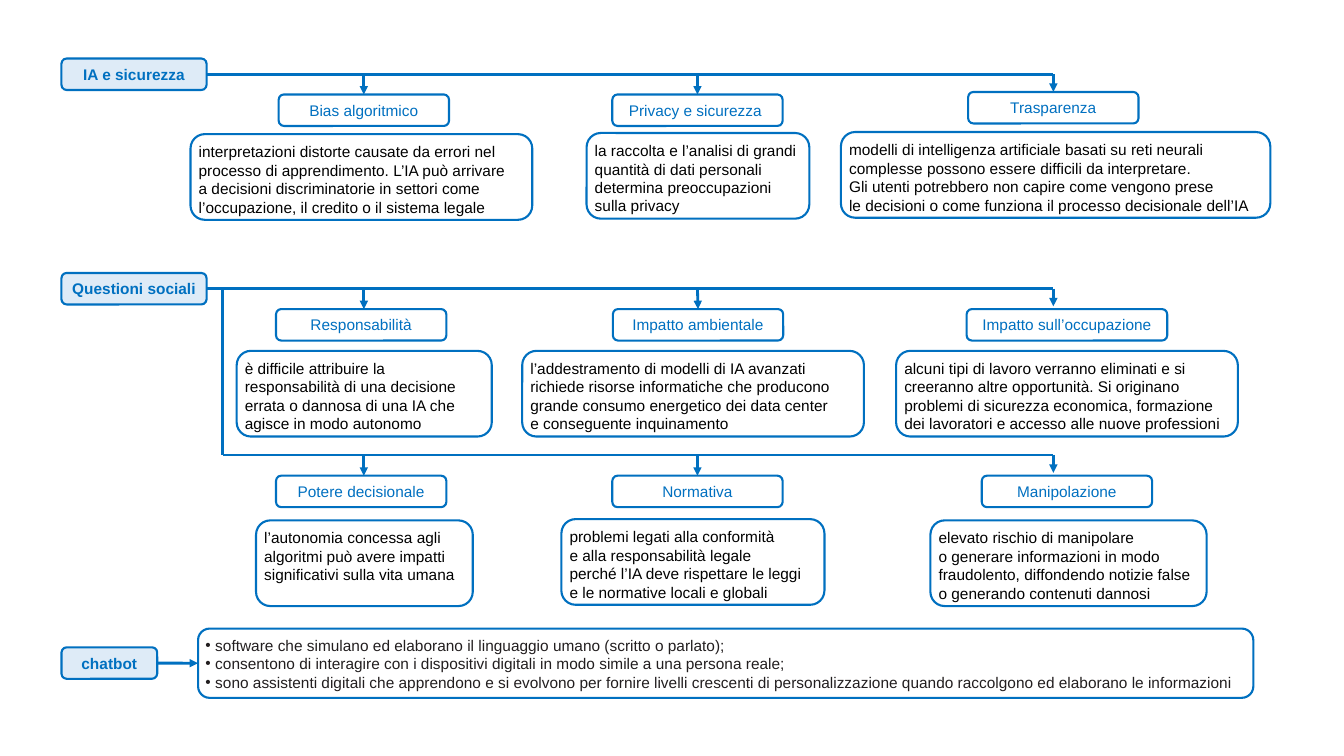
from dataclasses import dataclass

from lxml import etree
from pptx import Presentation
from pptx.dml.color import RGBColor
from pptx.enum.shapes import MSO_CONNECTOR, MSO_SHAPE
from pptx.enum.text import MSO_ANCHOR, PP_ALIGN
from pptx.oxml.ns import qn
from pptx.util import Pt

ROUNDED = MSO_SHAPE.ROUNDED_RECTANGLE
STRAIGHT = MSO_CONNECTOR.STRAIGHT
CENTER, LEFT = PP_ALIGN.CENTER, PP_ALIGN.LEFT
TOP, MIDDLE = MSO_ANCHOR.TOP, MSO_ANCHOR.MIDDLE
TOP_SIDE, LEFT_SIDE, RIGHT_SIDE = 0, 1, 3


@dataclass(frozen=True)
class Theme:
    """Colours, type and line sizes of the map."""
    blue: RGBColor = RGBColor(0x00, 0x70, 0xC0)
    pale: RGBColor = RGBColor(0xDE, 0xEB, 0xF7)
    black: RGBColor = RGBColor(0, 0, 0)
    soft_black: RGBColor = RGBColor(0x22, 0x1E, 0x1F)
    font: str = "Arial"
    size: int = 11
    border: float = 1.5
    branch: float = 2


@dataclass(frozen=True)
class Topic:
    """A heading and the explanation under it."""
    heading: str
    center: float
    top: float
    body_left: float
    body_top: float
    body_width: float
    body: str
    width: float = 121.7


THEME = Theme()
AXES = (259.9, 498.2, 752.4)
TAG_LEFT = 43.9
LABEL_HEIGHT = 22.5
BODY_HEIGHT = 61.2
STEM_X = 159.1
SECOND_RAIL_Y = 325

SECURITY = (
    Topic("Bias algoritmico", 259.9, 67.5, 136.1, 95.8, 244.1,
          "interpretazioni distorte causate da errori nel processo di apprendimento. "
          "L’IA può arrivare\n"
          "a decisioni discriminatorie in settori come l’occupazione, il credito "
          "o il sistema legale"),
    Topic("Privacy e sicurezza ", 498.2, 67.5, 419, 95, 159.1,
          "la raccolta e l’analisi di grandi quantità di dati personali "
          "determina preoccupazioni sulla privacy"),
    Topic("Trasparenza", 752.4, 65.7, 600.7, 94.3, 306.7,
          "modelli di intelligenza artificiale basati su reti neurali complesse "
          "possono essere difficili da interpretare.\n"
          "Gli utenti potrebbero non capire come vengono prese\n"
          "le decisioni o come funziona il processo decisionale dell’IA"),
)
SOCIAL = (
    Topic("Responsabilità", 258, 220.8, 169.1, 250.6, 182.2,
          "è difficile attribuire la responsabilità di una decisione errata "
          "o dannosa di una IA che agisce in modo autonomo"),
    Topic("Impatto ambientale", 498.6, 220.8, 373, 250.6, 244.1,
          "l’addestramento di modelli di IA avanzati richiede risorse informatiche "
          "che producono grande consumo energetico dei data center\n"
          "e conseguente inquinamento"),
    Topic("Impatto sull’occupazione", 762.1, 220.8, 640.1, 250.6, 244.1,
          "alcuni tipi di lavoro verranno eliminati e si creeranno altre opportunità. "
          "Si originano problemi di sicurezza economica, formazione dei lavoratori "
          "e accesso alle nuove professioni", 143.3),
)
POWER = (
    Topic("Potere decisionale", 258, 339.8, 182.9, 371.7, 154.8,
          "l’autonomia concessa agli algoritmi può avere impatti significativi "
          "sulla vita umana"),
    Topic("Normativa", 498.2, 339.8, 401, 370.8, 187.9,
          "problemi legati alla conformità\n"
          "e alla responsabilità legale\n"
          "perché l’IA deve rispettare le leggi\n"
          "e le normative locali e globali"),
    Topic("Manipolazione", 762.1, 339.8, 664.6, 371.7, 197.3,
          "elevato rischio di manipolare\n"
          "o generare informazioni in modo fraudolento, diffondendo notizie false "
          "o generando contenuti dannosi"),
)
CHATBOT = (
    "software che simulano ed elaborano il linguaggio umano (scritto o parlato);\n"
    "consentono di interagire con i dispositivi digitali in modo simile a una persona reale;\n"
    "sono assistenti digitali che apprendono e si evolvono per fornire livelli crescenti "
    "di personalizzazione quando raccolgono ed elaborano le informazioni"
)


def add_bullet(paragraph):
    """Give a paragraph a bullet and a hanging indent."""
    properties = paragraph._p.get_or_add_pPr()
    properties.set("marL", str(Pt(7)))
    properties.set("indent", str(-Pt(7)))
    etree.SubElement(properties, qn("a:buFont"), typeface=THEME.font)
    etree.SubElement(properties, qn("a:buChar"), char="•")


def add_box(slide, text, left, top, width, height, color,
            align=LEFT, anchor=TOP, fill=None, bold=False, bulleted=False):
    """Draw a rounded, outlined box with text."""
    box = slide.shapes.add_shape(ROUNDED, Pt(left), Pt(top), Pt(width), Pt(height))
    box.shadow.inherit = False
    box.line.color.rgb = THEME.blue
    box.line.width = Pt(THEME.border)
    if fill is None:
        box.fill.background()
    else:
        box.fill.solid()
        box.fill.fore_color.rgb = fill
    frame = box.text_frame
    frame.word_wrap = True
    frame.vertical_anchor = anchor
    frame.margin_left = frame.margin_right = Pt(2.83)
    frame.margin_top = frame.margin_bottom = Pt(2.83)
    frame.text = text
    for paragraph in frame.paragraphs:
        paragraph.alignment = align
        if bulleted:
            add_bullet(paragraph)
        for run in paragraph.runs:
            run.font.name = THEME.font
            run.font.size = Pt(THEME.size)
            run.font.bold = bold
            run.font.color.rgb = color
    return box


def add_tag(slide, text, top, width):
    """Draw the shaded label that opens a section."""
    return add_box(slide, text, TAG_LEFT, top, width, LABEL_HEIGHT, THEME.blue,
                   CENTER, MIDDLE, THEME.pale, bold=True)


def add_branch(slide, x1, y1, x2, y2, arrow=False):
    """Draw a straight branch, with an arrowhead if asked."""
    branch = slide.shapes.add_connector(STRAIGHT, Pt(x1), Pt(y1), Pt(x2), Pt(y2))
    branch.line.color.rgb = THEME.blue
    branch.line.width = Pt(THEME.branch)
    if arrow:
        etree.SubElement(branch.line._get_or_add_ln(), qn("a:tailEnd"), type="triangle")
    etree.SubElement(branch._element.spPr, qn("a:effectLst"))
    return branch


def add_topics(slide, topics, rail_start, rail_y):
    """Draw a rail with its topics hanging below, and return the rail."""
    rail = add_branch(slide, rail_start, rail_y, AXES[-1], rail_y)
    for axis, topic in zip(AXES, topics):
        heading = add_box(slide, topic.heading, topic.center - topic.width / 2, topic.top,
                          topic.width, LABEL_HEIGHT, THEME.blue, CENTER, MIDDLE)
        add_box(slide, topic.body, topic.body_left, topic.body_top,
                topic.body_width, BODY_HEIGHT, THEME.black)
        offset = abs(axis - topic.center)
        gap = 2 if offset > 5 else 0
        arrow = add_branch(slide, axis, rail_y, axis, topic.top - gap, arrow=True)
        if offset < 1:
            arrow.end_connect(heading, TOP_SIDE)
    return rail


def main():
    """Build the concept map and save it."""
    deck = Presentation()
    deck.slide_width, deck.slide_height = Pt(960), Pt(540)
    slide = deck.slides.add_slide(deck.slide_layouts[6])

    tag_width = 103.7
    for title, top, topics in (("IA e sicurezza", 41.8, SECURITY),
                               ("Questioni sociali", 195, SOCIAL)):
        tag = add_tag(slide, title, top, tag_width)
        rail_y = top + LABEL_HEIGHT / 2
        rail = add_topics(slide, topics, TAG_LEFT + tag_width, rail_y)
        rail.begin_connect(tag, RIGHT_SIDE)

    add_branch(slide, STEM_X, rail_y, STEM_X, SECOND_RAIL_Y)
    add_topics(slide, POWER, STEM_X, SECOND_RAIL_Y)

    chatbot = add_tag(slide, "chatbot", 462.4, 68.4)
    features = add_box(slide, CHATBOT, 141.5, 449, 753.8, 49.5,
                       THEME.soft_black, bulleted=True)
    link = add_branch(slide, 112.3, 473.7, 141.5, 473.7, arrow=True)
    link.begin_connect(chatbot, RIGHT_SIDE)
    link.end_connect(features, LEFT_SIDE)
    deck.save("out.pptx")


if __name__ == "__main__":
    main()
